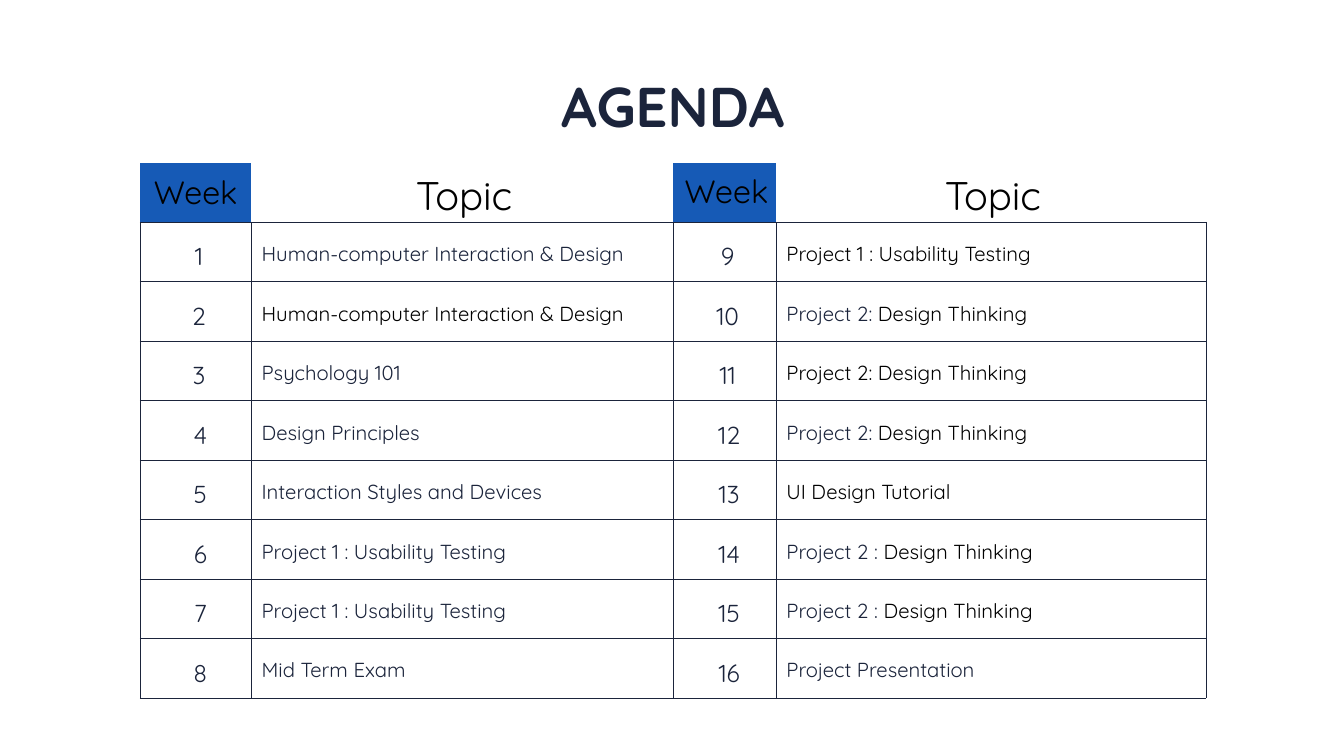
from lxml import etree
from pptx import Presentation
from pptx import util as u
from pptx.dml.color import RGBColor
from pptx.enum import text
from pptx.oxml import ns

FONT = "Quicksand"
INK = RGBColor(0x1B, 0x24, 0x3B)
BLACK = RGBColor(0, 0, 0)
BLUE = RGBColor(0x16, 0x5A, 0xB6)
WHITE = RGBColor(0xFF, 0xFF, 0xFF)

COLUMN_WIDTHS = (2.2, 8.37, 2.04, 8.53)
ROW_HEIGHT = 1.18
WEEKS_PER_HALF = 8
HEADER_INSETS = (0.16, 0.16, 0.08, 0)
BODY_INSETS = (0.21, 0.38, 0.08, 0.04)
NARROW_INSETS = (0.19, 0.38, 0, 0.04)
CENTER = text.PP_ALIGN.CENTER
LEFT = text.PP_ALIGN.LEFT

TOPICS = [
    [("Human-computer Interaction & Design", INK)],
    [("Human-computer Interaction & Design", BLACK)],
    [("Psychology 101", INK)],
    [("Design Principles", INK)],
    [("Interaction Styles and Devices", INK)],
    [("Project 1 : Usability Testing", INK)],
    [("Project 1 : Usability Testing", INK)],
    [("Mid Term Exam", INK)],
    [("Project 1 : Usability Testing", BLACK)],
    [("Project 2: ", INK), ("Design Thinking", BLACK)],
    [("Project 2: Design Thinking", BLACK)],
    [("Project 2: ", INK), ("Design Thinking", BLACK)],
    [("UI Design Tutorial", BLACK)],
    [("Project 2 : ", INK), ("Design Thinking", BLACK)],
    [("Project 2 : ", INK), ("Design Thinking", BLACK)],
    [("Project Presentation", INK)],
]


def add_runs(paragraph, runs, size, alignment, bold=False):
    paragraph.alignment = alignment
    for words, color in runs:
        run = paragraph.add_run()
        run.text = words
        run.font.name = FONT
        run.font.size = u.Pt(size)
        run.font.bold = bold
        run.font.color.rgb = color


def set_borders(cell, visible):
    properties = cell._tc.get_or_add_tcPr()
    for side in "LRTB":
        line = etree.SubElement(properties, ns.qn(f"a:ln{side}"), w=str(u.Pt(1)))
        if side in visible:
            fill = etree.SubElement(line, ns.qn("a:solidFill"))
            etree.SubElement(fill, ns.qn("a:srgbClr"), val=str(INK))
        else:
            etree.SubElement(line, ns.qn("a:noFill"))


def fill_cell(cell, runs, size, alignment, insets, fill, borders="LRTB"):
    left, top, right, bottom = (u.Inches(inset) for inset in insets)
    cell.margin_left, cell.margin_top = left, top
    cell.margin_right, cell.margin_bottom = right, bottom
    cell.vertical_anchor = text.MSO_ANCHOR.TOP
    set_borders(cell, borders)
    if fill is None:
        cell.fill.background()
    else:
        cell.fill.solid()
        cell.fill.fore_color.rgb = fill
    add_runs(cell.text_frame.paragraphs[0], runs, size, alignment)


def add_title(slide, words):
    box = slide.shapes.add_textbox(
        u.Inches(4.55), u.Inches(1.36), u.Inches(17.59), u.Inches(1.45))
    box.text_frame.word_wrap = True
    add_runs(box.text_frame.paragraphs[0], [(words, INK)], 80, CENTER, bold=True)


def add_schedule(slide):
    rows = WEEKS_PER_HALF + 1
    table = slide.shapes.add_table(
        rows, len(COLUMN_WIDTHS), u.Inches(2.78), u.Inches(3.23),
        u.Inches(sum(COLUMN_WIDTHS)), u.Inches(rows * ROW_HEIGHT)).table
    table.first_row = table.horz_banding = False
    for column, width in zip(table.columns, COLUMN_WIDTHS):
        column.width = u.Inches(width)
    for row in table.rows:
        row.height = u.Inches(ROW_HEIGHT)

    for column in (0, 2):
        insets = (0, 0.19, 0, 0) if column == 0 else HEADER_INSETS
        fill_cell(table.cell(0, column), [("Week", BLACK)], 46, CENTER,
                  insets, BLUE, "B")
        fill_cell(table.cell(0, column + 1), [("Topic", BLACK)], 57, CENTER,
                  HEADER_INSETS, None, "B")

    for index, topic in enumerate(TOPICS):
        half, offset = divmod(index, WEEKS_PER_HALF)
        row, column = offset + 1, 2 * half
        insets = BODY_INSETS if row <= 3 else NARROW_INSETS
        fill_cell(table.cell(row, column), [(str(index + 1), INK)], 35, CENTER,
                  insets, WHITE)
        fill_cell(table.cell(row, column + 1), topic, 29, LEFT,
                  BODY_INSETS, WHITE)


def main():
    presentation = Presentation()
    presentation.slide_width = u.Inches(26.66)
    presentation.slide_height = u.Inches(15)
    slide = presentation.slides.add_slide(presentation.slide_layouts[6])
    slide.background.fill.solid()
    slide.background.fill.fore_color.rgb = WHITE
    add_schedule(slide)
    add_title(slide, "AGENDA")
    presentation.save("out.pptx")


if __name__ == "__main__":
    main()
